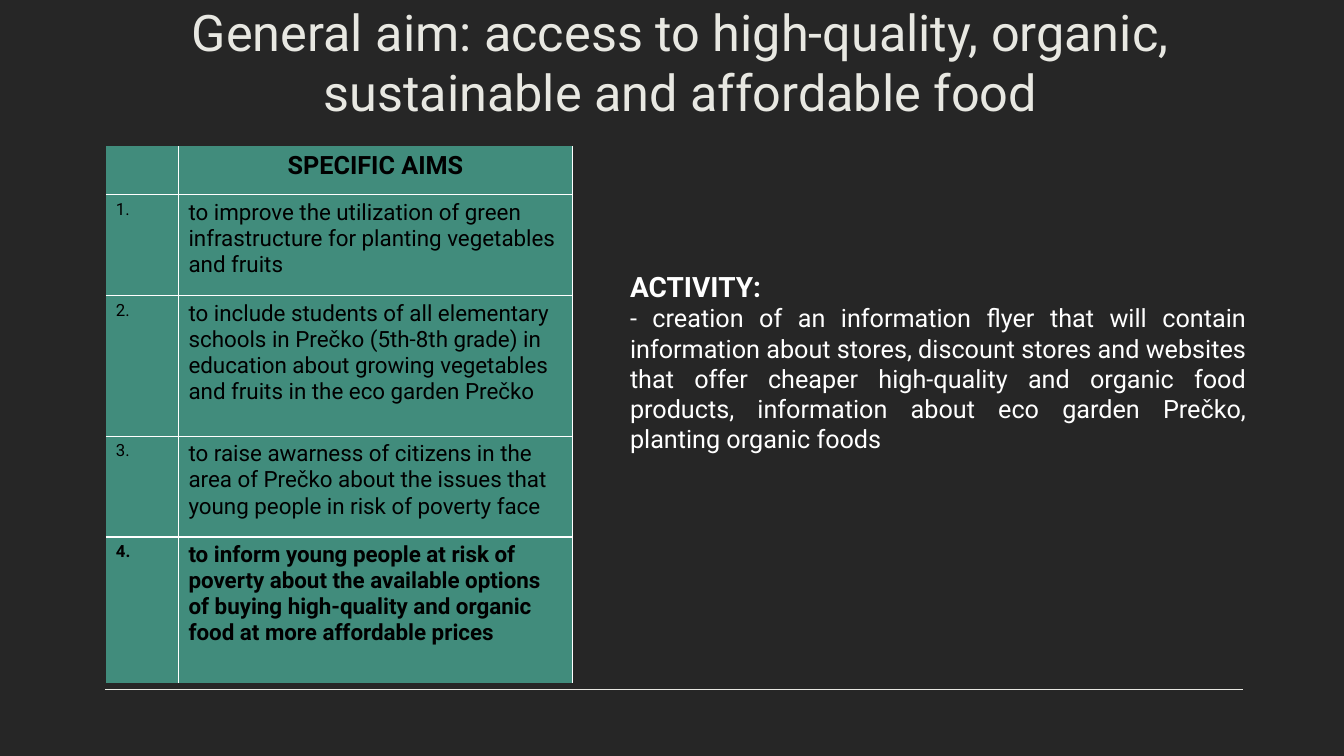
from lxml import etree
from pptx import Presentation
from pptx.dml.color import RGBColor
from pptx.enum.shapes import MSO_CONNECTOR
from pptx.enum.text import MSO_ANCHOR, PP_ALIGN
from pptx.oxml.ns import qn
from pptx.util import Inches, Pt

STRAIGHT = MSO_CONNECTOR.STRAIGHT
TOP, BOTTOM = MSO_ANCHOR.TOP, MSO_ANCHOR.BOTTOM
LEFT, CENTER, JUSTIFY = PP_ALIGN.LEFT, PP_ALIGN.CENTER, PP_ALIGN.JUSTIFY

HUES = {"back": "262626", "cream": "E8E8E2", "green": "418C7C",
        "white": "FFFFFF", "black": "000000"}

AIMS = [
    "to improve the utilization of green infrastructure for planting vegetables and fruits",
    "to include students of all elementary schools in Prečko (5th-8th grade) in education "
    "about growing vegetables and fruits in the eco garden Prečko",
    "to raise awarness of citizens in the area of Prečko about the issues that young people "
    "in risk of poverty face",
    "to inform young people at risk of poverty about the available options of buying "
    "high-quality and organic food at more affordable prices",
]
TASK = ("- creation of an information flyer that will contain information about stores, "
        "discount stores and websites that offer cheaper high-quality and organic food "
        "products, information about eco garden Prečko, planting organic foods")


class Board:
    """Draws styled elements on a slide, on a grid of 100 columns by 100 rows."""

    def __init__(self, deck, font):
        self.deck, self.font = deck, font
        self.slide = deck.slides.add_slide(deck.slide_layouts[6])
        fill = self.slide.background.fill
        fill.solid()
        fill.fore_color.rgb = self.hue("back")

    def hue(self, name):
        return RGBColor.from_string(HUES[name])

    def col(self, n):
        return round(self.deck.slide_width * n / 100)

    def row(self, n):
        return round(self.deck.slide_height * n / 100)

    def box(self, x, y, w, h):
        return self.col(x), self.row(y), self.col(w), self.row(h)

    def runs(self, frame, parts, color, align):
        para = frame.paragraphs[0]
        para.alignment = align
        for i, (text, size, bold) in enumerate(parts):
            if i:
                para.add_line_break()
            run = para.add_run()
            run.text = text
            run.font.name = self.font
            run.font.size = Pt(size)
            run.font.bold = bold
            run.font.color.rgb = self.hue(color)

    def text(self, spot, parts, color, align, anchor=TOP):
        frame = self.slide.shapes.add_textbox(*self.box(*spot)).text_frame
        frame.word_wrap = True
        frame.vertical_anchor = anchor
        self.runs(frame, parts, color, align)

    def line(self, x, y, end, color, width):
        rule = self.slide.shapes.add_connector(
            STRAIGHT, self.col(x), self.row(y), self.col(end), self.row(y))
        rule.line.color.rgb = self.hue(color)
        rule.line.width = Pt(width)
        etree.SubElement(rule._element.spPr, qn("a:effectLst"))

    def edge(self, cell, sides):
        props = cell._tc.get_or_add_tcPr()
        for side in "LRTB":
            mark = etree.SubElement(props, qn(f"a:ln{side}"), w=str(Pt(1)))
            if side in sides:
                fill = etree.SubElement(mark, qn("a:solidFill"))
                etree.SubElement(fill, qn("a:srgbClr"), val=HUES["white"])
            else:
                etree.SubElement(mark, qn("a:noFill"))

    def table(self, x, y, wide, high, data):
        spot = self.box(x, y, sum(wide), sum(high))
        grid = self.slide.shapes.add_table(len(high), len(wide), *spot).table
        grid.first_row = grid.horz_banding = False
        for n, w in enumerate(wide):
            grid.columns[n].width = self.col(w)
        for n, h in enumerate(high):
            grid.rows[n].height = self.row(h)
            for m, (parts, align) in enumerate(data[n]):
                cell = grid.cell(n, m)
                sides = "R" + "L" * (m > 0) + "T" * (n > 0) + "B" * (n < len(high) - 1)
                self.edge(cell, sides)
                cell.fill.solid()
                cell.fill.fore_color.rgb = self.hue("green")
                self.runs(cell.text_frame, parts, "black", align)


def main():
    deck = Presentation()
    deck.slide_width, deck.slide_height = Inches(13.33), Inches(7.5)
    board = Board(deck, "Roboto")
    board.line(7.8, 91.2, 92.5, "cream", 0.85)
    title = "General aim: access to high-quality, organic, sustainable and affordable food"
    board.text((7.88, 7.07, 85.52, 9.73), [(title, 36, False)], "cream", CENTER, BOTTOM)
    data = [[([], LEFT), ([("SPECIFIC AIMS", 18, True)], CENTER)]]
    for n, aim in enumerate(AIMS, 1):
        bold = n == len(AIMS)
        data.append([([(f"{n}.", 12, bold)], LEFT), ([(aim, 16, bold)], LEFT)])
    board.table(7.88, 19.33, [5.4, 29.33], [6.45, 13.33, 18.6, 13.33, 19.33], data)
    board.text((46.14, 34.93, 47.34, 30.13),
               [("ACTIVITY:", 20, True), (TASK, 18, False)], "white", JUSTIFY)
    deck.save("out.pptx")


if __name__ == "__main__":
    main()
